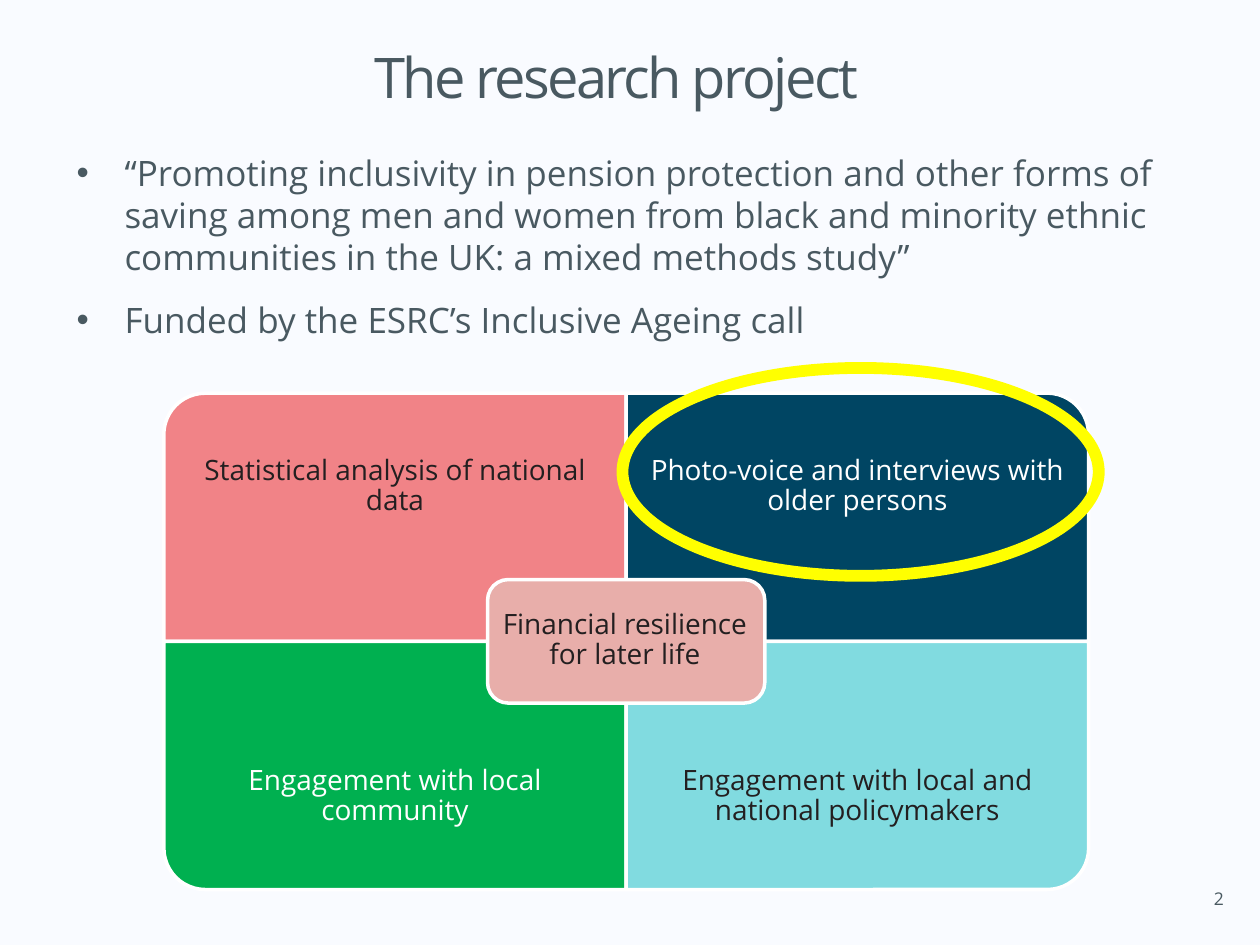
from lxml.etree import SubElement
from pptx import Presentation
from pptx.dml.color import RGBColor
from pptx.enum.shapes import MSO_SHAPE as Preset
from pptx.enum.text import MSO_ANCHOR as Anchor, PP_ALIGN as Align
from pptx.oxml.ns import qn
from pptx.util import Inches, Pt

COLORS = {
    "background": "F9FBFF", "slate": "495961", "dark": "231F20", "white": "FFFFFF",
    "coral": "F18387", "navy": "004563", "green": "00B050", "aqua": "81DBE0",
    "rose": "E8AEAA", "yellow": "FFFF00",
}


def color(name):
    return RGBColor.from_string(COLORS[name])


def add_text(shapes, text, left, top, width, height, size=16, ink="slate",
             align=Align.LEFT, anchor=Anchor.TOP, inset=None, line_spacing=None,
             space_after=0, tracking=None, bullet=None):
    box = shapes.add_textbox(Inches(left), Inches(top), Inches(width), Inches(height))
    frame = box.text_frame
    frame.word_wrap = True
    frame.vertical_anchor = anchor
    if inset is not None:
        frame.margin_left = frame.margin_right = Inches(inset)
        frame.margin_top = frame.margin_bottom = Inches(inset)
    frame.text = text
    for paragraph in frame.paragraphs:
        paragraph.alignment = align
        paragraph.line_spacing = line_spacing
        paragraph.space_after = Pt(space_after)
        run = paragraph.runs[0]
        run.font.name = "Open Sans"
        run.font.size = Pt(size)
        run.font.color.rgb = color(ink)
        if tracking is not None:
            run.font._element.set("spc", str(int(tracking * 100)))
        if bullet:
            properties = paragraph._p.get_or_add_pPr()
            properties.set("marL", str(Inches(0.38)))
            properties.set("indent", str(-Inches(0.38)))
            SubElement(properties, qn("a:buFont"), typeface="Arial")
            SubElement(properties, qn("a:buChar"), char=bullet)


presentation = Presentation()
presentation.slide_width = Inches(10)
presentation.slide_height = Inches(7.5)
slide = presentation.slides.add_slide(presentation.slide_layouts[6])
slide.background.fill.solid()
slide.background.fill.fore_color.rgb = color("background")

add_text(slide.shapes, "2", 9.02, 7, 0.79, 0.27, size=10, align=Align.RIGHT)
add_text(slide.shapes, "The research project", 2.87, 0.29, 6.38, 0.63,
         size=32, anchor=Anchor.BOTTOM, tracking=-1.5)
points = [
    "“Promoting inclusivity in pension protection and other forms of saving among men "
    "and women from black and minority ethnic communities in the UK: a mixed methods study”",
    "Funded by the ESRC’s Inclusive Ageing call",
]
add_text(slide.shapes, "\n".join(points), 0.51, 1.15, 8.91, 5.66, size=20,
         line_spacing=Pt(24), space_after=12, bullet="•")

matrix_left, matrix_top = 1.3, 3.12
cell_width, cell_height, label_height = 3.67, 1.97, 1.48
quadrants = [
    ("Statistical analysis of national data", 0, 0, 270, "coral", "dark"),
    ("Photo-voice and interviews with older persons", 1, 0, 0, "navy", "white"),
    ("Engagement with local community", 0, 1, 180, "green", "white"),
    ("Engagement with local and national policymakers", 1, 1, 90, "aqua", "dark"),
]
blocks = []
for label, column, row, rotation, fill, ink in quadrants:
    left = matrix_left + column * cell_width
    top = matrix_top + row * cell_height
    label_top = top + row * (cell_height - label_height)
    blocks.append((Preset.ROUND_1_RECTANGLE, (left, top, cell_width, cell_height), rotation,
                   fill, label, (left, label_top, cell_width, label_height), ink, 0.12))
blocks.append((Preset.ROUNDED_RECTANGLE, (3.87, 4.6, 2.2, 0.98), 0, "rose",
               "Financial resilience for later life", (3.91, 4.64, 2.1, 0.89), "dark", 0.07))

matrix = slide.shapes.add_group_shape()
for preset, (left, top, width, height), rotation, fill, label, label_box, ink, inset in blocks:
    if rotation in (90, 270):
        left, top = left + (width - height) / 2, top + (height - width) / 2
        width, height = height, width
    shape = matrix.shapes.add_shape(preset, Inches(left), Inches(top), Inches(width), Inches(height))
    shape.rotation = rotation
    shape.shadow.inherit = False
    shape.fill.solid()
    shape.fill.fore_color.rgb = color(fill)
    shape.line.color.rgb = color("white")
    shape.line.width = Pt(2)
    add_text(matrix.shapes, label, *label_box, ink=ink, align=Align.CENTER,
             anchor=Anchor.MIDDLE, inset=inset, line_spacing=0.9)

highlight = slide.shapes.add_shape(Preset.OVAL, Inches(4.94), Inches(2.92), Inches(3.78), Inches(1.65))
highlight.shadow.inherit = False
highlight.fill.background()
highlight.line.color.rgb = color("yellow")
highlight.line.width = Pt(6.75)

presentation.save("out.pptx")
